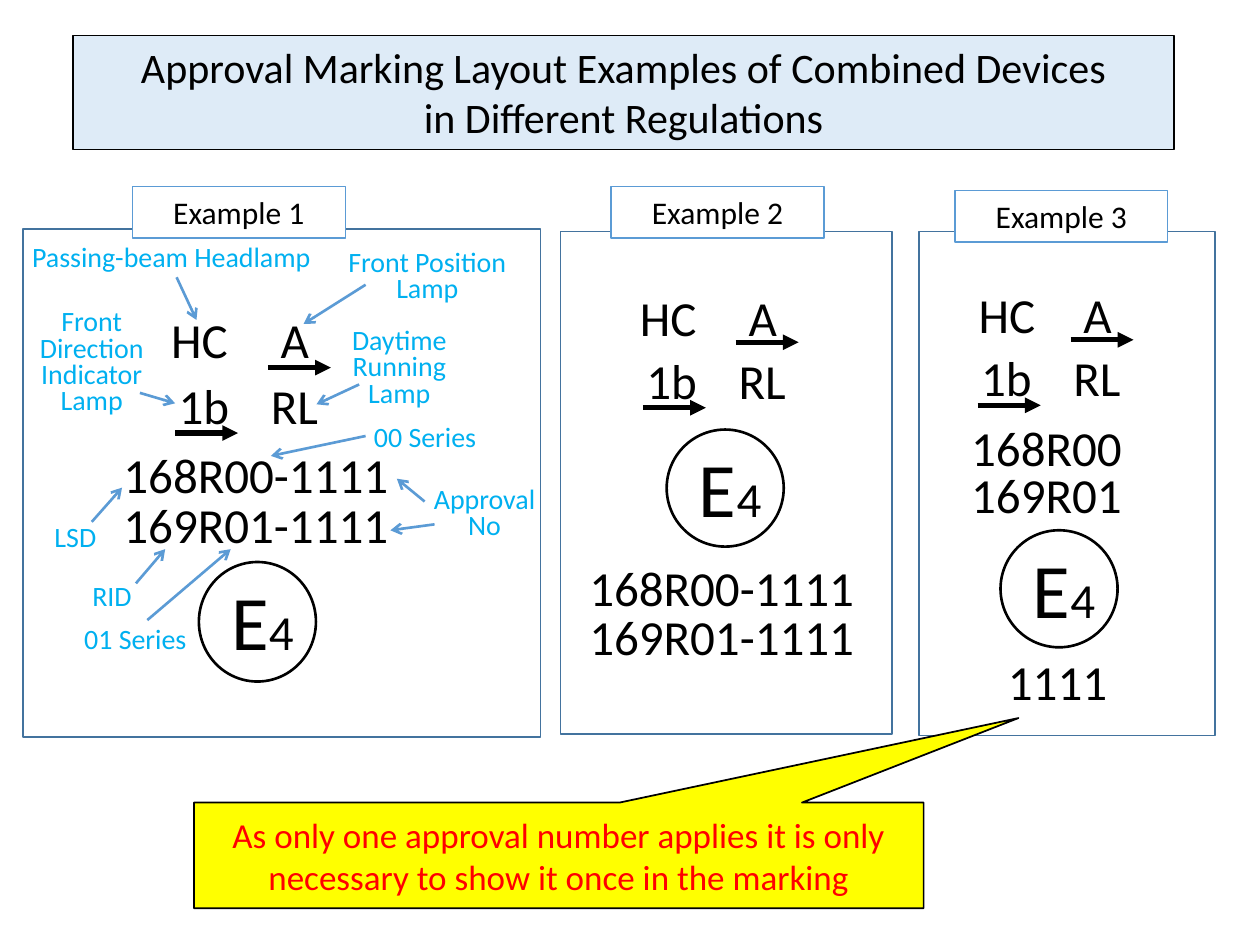
import pptx
import pptx.util
import pptx.dml.color
import pptx.enum.shapes
import pptx.enum.text
import pptx.oxml
import pptx.oxml.ns
from pptx.util import Cm, Pt

COLORS = {
    "black": "000000", "white": "FFFFFF", "title": "DEEBF7", "panel": "43739E",
    "pointer": "5B9BD5", "note": "00B0F0", "yellow": "FFFF00", "red": "FF0000",
}
RGB = {name: pptx.dml.color.RGBColor.from_string(code) for name, code in COLORS.items()}
SHAPE = pptx.enum.shapes.MSO_SHAPE
ALIGN = pptx.enum.text.PP_ALIGN
ANCHOR = pptx.enum.text.MSO_ANCHOR
FIT = pptx.enum.text.MSO_AUTO_SIZE


def write(frame, lines, color, align=ALIGN.CENTER, spacing=1.0, wrap=True):
    """Fill a frame with lines, each a list of (text, point size) runs."""
    frame.word_wrap = wrap
    for number, runs in enumerate(lines):
        paragraph = frame.paragraphs[0] if number == 0 else frame.add_paragraph()
        paragraph.alignment = align
        paragraph.line_spacing = spacing
        for text, size in runs:
            run = paragraph.add_run()
            run.text = text
            run.font.name = "Calibri"
            run.font.size = Pt(size)
            run.font.color.rgb = RGB[color]


def draw_arrow(start, end, color, width, head):
    line = slide.shapes.add_connector(
        pptx.enum.shapes.MSO_CONNECTOR.STRAIGHT, *map(Cm, start + end))
    line.line.color.rgb = RGB[color]
    line.line.width = Pt(width)
    tip = pptx.oxml.parse_xml(
        f'<a:tailEnd {pptx.oxml.ns.nsdecls("a")} type="{head}"/>')
    line.line._get_or_add_ln().append(tip)
    line._element.spPr.append(
        pptx.oxml.parse_xml(f'<a:effectLst {pptx.oxml.ns.nsdecls("a")}/>'))


deck = pptx.Presentation()
deck.slide_width, deck.slide_height = Cm(25.4), Cm(19.05)
slide = deck.slides.add_slide(deck.slide_layouts[5])

title = slide.shapes.title
title.left, title.top, title.width, title.height = map(Cm, (1.47, 0.71, 22.2, 2.31))
title.fill.solid()
title.fill.fore_color.rgb = RGB["title"]
title.line.color.rgb = RGB["black"]
title.line.width = Pt(0.75)
title.text_frame.auto_size = FIT.NONE
title.text_frame.vertical_anchor = ANCHOR.TOP
write(title.text_frame, [
    [("Approval Marking Layout Examples of Combined Devices", 24)],
    [("in Different Regulations", 24)],
], "black")

# Per example: panel box, tag corner, corner of "1b", left of "HC", row pitch,
# ring box, and the approval codes as (text, left, top, width)
examples = [
    {"panel": (0.46, 4.62, 10.44, 10.24), "tag": (2.67, 3.76),
     "marks": (3.35, 7.57), "beam_left": 3.2, "pitch": 1.32,
     "ring": (4.01, 11.33, 2.36, 2.41),
     "codes": [("168R00-1111", 2.24, 8.97, 5.94), ("169R01-1111", 2.24, 9.98, 5.94)]},
    {"panel": (11.3, 4.67, 6.68, 10.13), "tag": (12.32, 3.76),
     "marks": (12.78, 7.06), "beam_left": 12.65, "pitch": 1.27,
     "ring": (13.44, 8.66, 2.36, 2.36),
     "codes": [("168R00-1111", 11.63, 11.25, 5.94), ("169R01-1111", 11.63, 12.24, 5.94)]},
    {"panel": (18.52, 4.67, 5.97, 10.16), "tag": (19.25, 3.84),
     "marks": (19.53, 7.01), "beam_left": 19.48, "pitch": 1.27,
     "ring": (20.17, 10.69, 2.36, 2.36),
     "codes": [("168R00", 19.33, 8.41, 3.61), ("169R01", 19.33, 9.37, 3.61),
               ("1111", 20.07, 13.13, 2.54)]},
]

for number, example in enumerate(examples, 1):
    left, top = example["marks"]
    upper = top - example["pitch"]
    marks = [
        ("HC", example["beam_left"], upper, 1.68),
        ("A", left + 2.06, upper, 1.09),
        ("1b", left, top, 1.55),
        ("RL", left + 1.86, top, 1.47),
    ]
    for text, x, y, width in marks + example["codes"]:
        mark = slide.shapes.add_textbox(Cm(x), Cm(y), Cm(width), Cm(1.33))
        write(mark.text_frame, [[(text, 28)]], "black", ALIGN.LEFT, Pt(30), False)
    for x, y in ((left + 2.05, top - 0.16), (left + 0.18, top + 1.16)):
        draw_arrow((x, y), (x + 1.27, y), "black", 3, "triangle")

    ring_left, ring_top = example["ring"][:2]
    country = slide.shapes.add_textbox(
        Cm(ring_left + 0.4), Cm(ring_top + 0.1), Cm(2.72), Cm(2.14))
    write(country.text_frame, [[("E", 44), ("4", 28)]], "black", ALIGN.LEFT)

    outlines = [
        (SHAPE.OVAL, example["ring"], "black", 1.5, None),
        (SHAPE.RECTANGLE, example["panel"], "panel", 1, None),
        (SHAPE.RECTANGLE, example["tag"] + (4.29, 1.04), "pointer", 0.75,
         f"Example {number}"),
    ]
    for preset, box, color, weight, label in outlines:
        outline = slide.shapes.add_shape(preset, *map(Cm, box))
        outline.shadow.inherit = False
        outline.line.color.rgb = RGB[color]
        outline.line.width = Pt(weight)
        if label:
            outline.fill.solid()
            outline.fill.fore_color.rgb = RGB["white"]
            write(outline.text_frame, [[(label, 18)]], "black")
        else:
            outline.fill.background()

# Explanations in example 1: lines, box, line spacing
notes = [
    (["Passing-beam Headlamp"], (-0.15, 4.57, 7.21, 1.07), 23),
    (["Front Position", "Lamp"], (6.71, 4.95, 3.81, 1.35), 15),
    (["Front", "Direction", "Indicator", "Lamp"], (0.3, 6.15, 3.1, 2.46), 15),
    (["Daytime Running Lamp"], (6.5, 6.53, 3.1, 1.9), 15),
    (["00 Series"], (7.11, 8.2, 2.92, 1.09), 23),
    (["Approval No"], (8.31, 9.73, 2.92, 1.37), 15),
    (["LSD"], (0.25, 10.21, 2.54, 1.09), 23),
    (["RID"], (0.99, 11.4, 2.54, 1.09), 23),
    (["01 Series"], (1.27, 12.27, 2.92, 1.09), 23),
]
for lines, box, spacing in notes:
    note = slide.shapes.add_textbox(*map(Cm, box))
    write(note.text_frame, [[(line, 16)] for line in lines], "note",
          spacing=Pt(spacing))

pointers = [
    ((3.56, 5.59), (3.96, 6.45)),    # passing-beam headlamp
    ((7.37, 5.74), (6.12, 6.53)),    # front position lamp
    ((2.82, 7.92), (3.53, 8.13)),    # front direction indicator lamp
    ((7.24, 7.75), (6.38, 8.15)),    # daytime running lamp
    ((7.37, 8.79), (5.46, 9.19)),    # 00 series
    ((8.56, 10.11), (8.0, 9.65)),    # approval number, first line
    ((8.76, 10.57), (7.87, 10.69)),  # approval number, second line
    ((1.85, 10.52), (2.46, 9.83)),   # LSD
    ((2.74, 11.76), (3.33, 11.07)),  # RID
    ((2.97, 12.5), (4.65, 11.07)),   # 01 series
]
for start, end in pointers:
    draw_arrow(start, end, "pointer", 1.5, "arrow")

remark = slide.shapes.add_shape(
    SHAPE.RECTANGULAR_CALLOUT, Cm(3.91), Cm(16.18), Cm(14.71), Cm(2.13))
remark.adjustments[0], remark.adjustments[1] = 0.63, -1.3
remark.shadow.inherit = False
remark.fill.solid()
remark.fill.fore_color.rgb = RGB["yellow"]
remark.line.color.rgb = RGB["black"]
remark.line.width = Pt(1)
write(remark.text_frame, [[(
    "As only one approval number applies it is only necessary "
    "to show it once in the marking", 20)]], "red")

deck.save("out.pptx")
